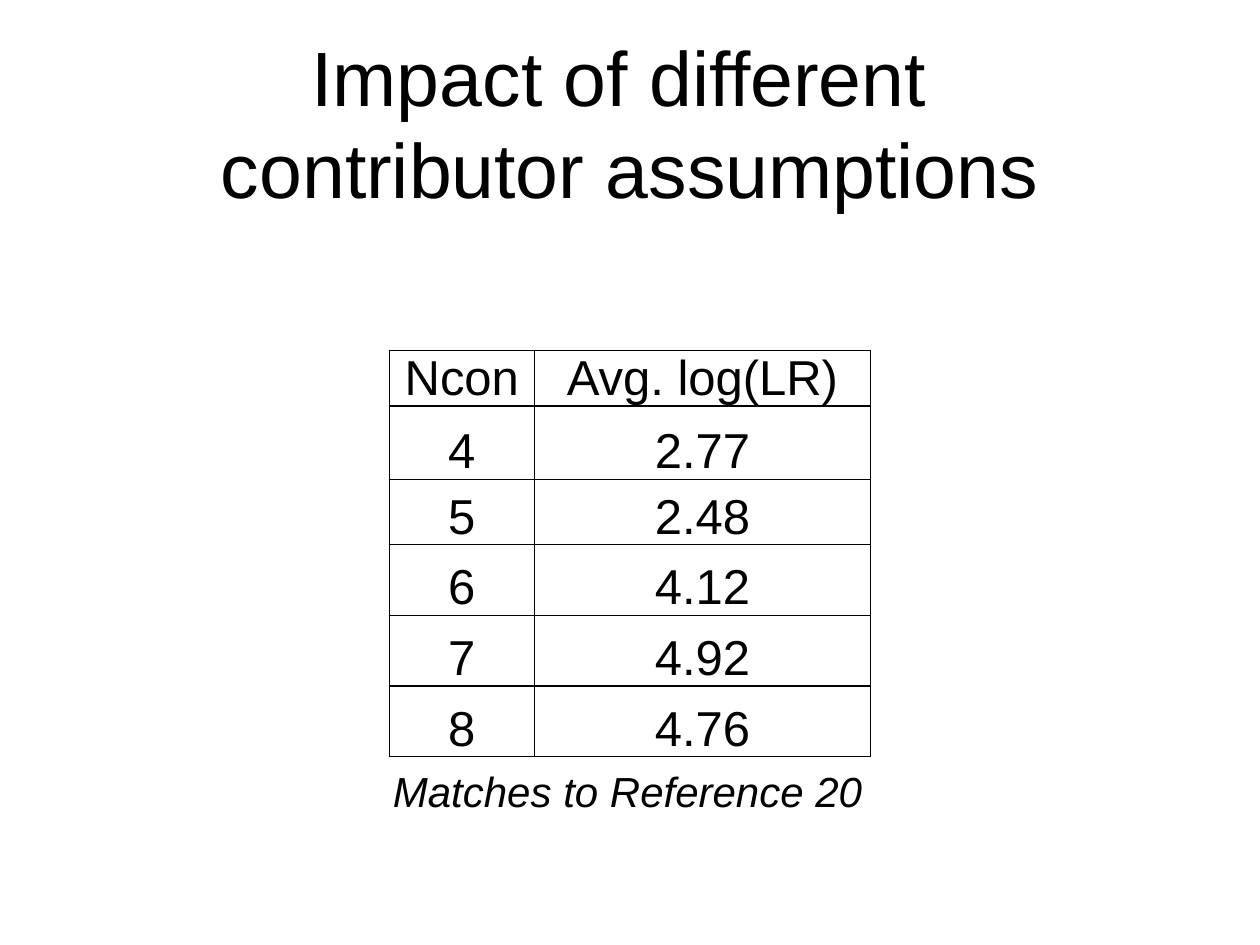
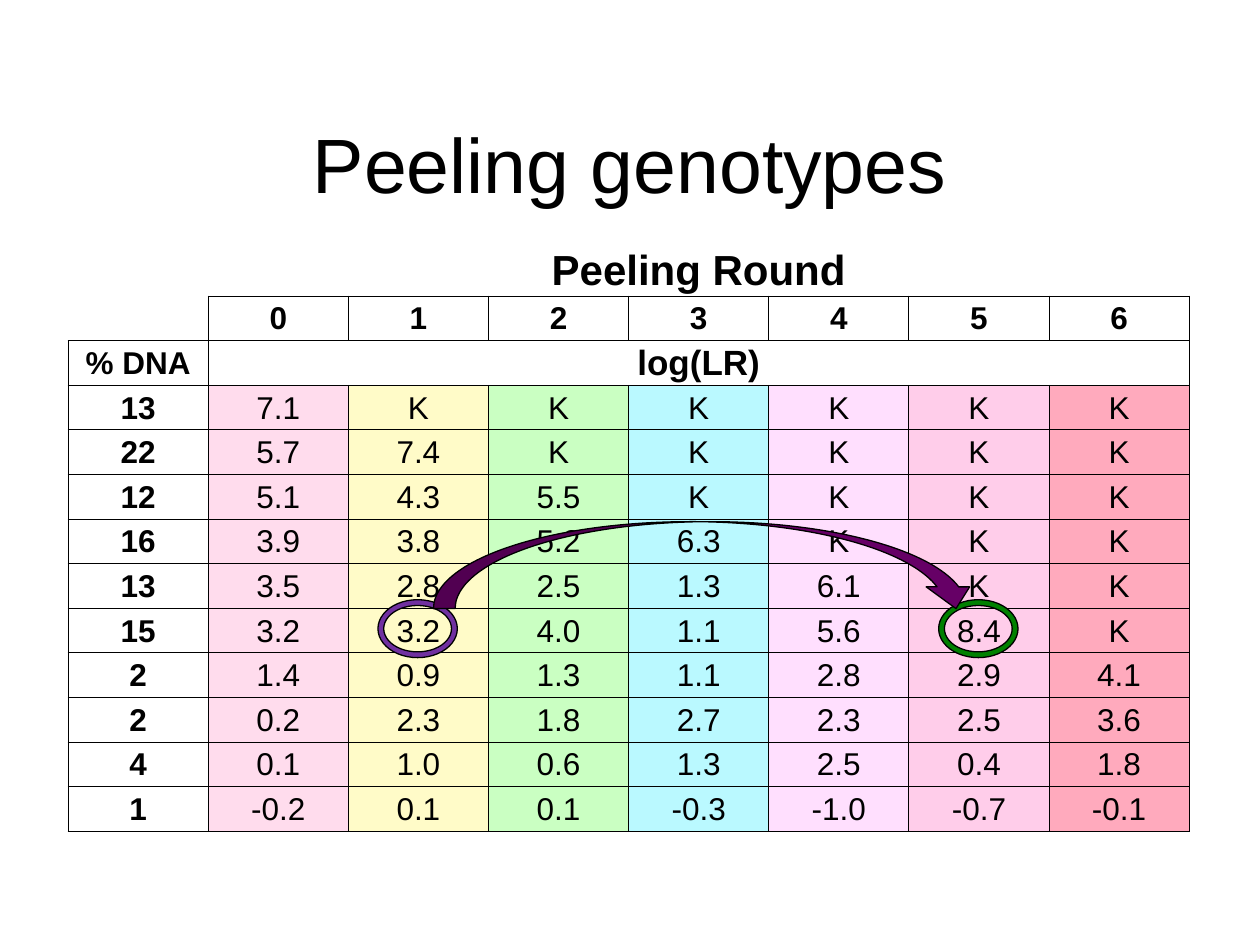
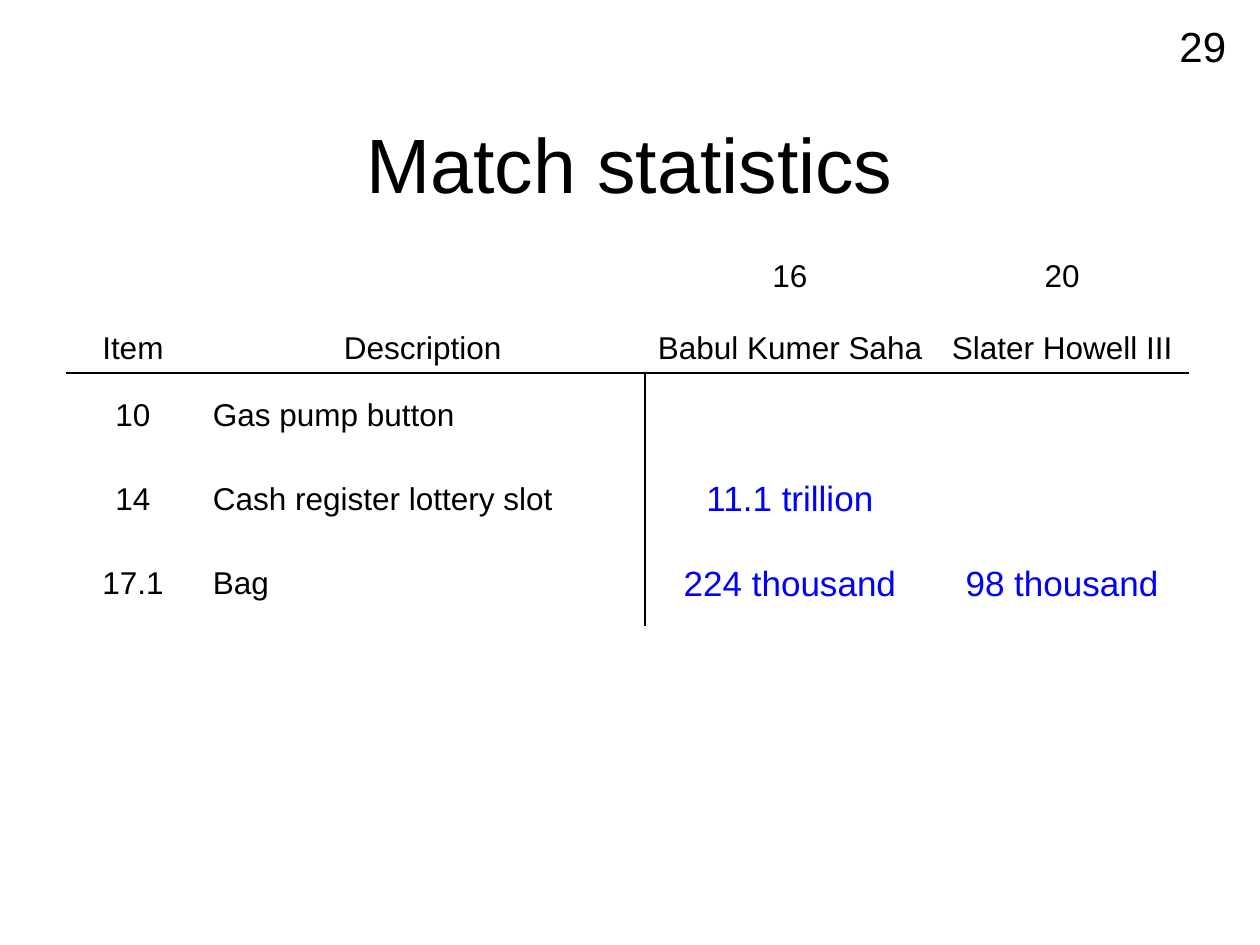
from lxml.etree import SubElement
from pptx import Presentation
from pptx.dml.color import RGBColor
from pptx.enum.shapes import MSO_SHAPE
from pptx.enum.text import MSO_ANCHOR, MSO_AUTO_SIZE, PP_ALIGN
from pptx.oxml.ns import qn
from pptx.util import Inches, Pt

FONT = "Arial"
PLAIN = "{2D5ABB26-0587-4C30-8999-92F81FD0307C}"
HUES = {"ink": "000000", "stat": "0000FF", "start": "7030A0",
        "end": "008000", "arc": "660066"}
ROUNDS = ["FFDCED", "FFFBC8", "CAFFC2", "BAF9FF", "FFDFFE", "FFCDEA", "FFAABD"]
TIGHT = (0.01, 0.01, 0.01, 0)
LOOSE = (0.1, 0.05, 0.1, 0.05)

IMPACT = [
    ["Ncon", "Avg. log(LR)"],
    ["4", "2.77"],
    ["5", "2.48"],
    ["6", "4.12"],
    ["7", "4.92"],
    ["8", "4.76"],
]
PEEL = [
    ["", "Peeling Round"] + [""] * 6,
    ["", "0", "1", "2", "3", "4", "5", "6"],
    ["% DNA", "log(LR)"] + [""] * 6,
    ["13", "7.1", "K", "K", "K", "K", "K", "K"],
    ["22", "5.7", "7.4", "K", "K", "K", "K", "K"],
    ["12", "5.1", "4.3", "5.5", "K", "K", "K", "K"],
    ["16", "3.9", "3.8", "5.2", "6.3", "K", "K", "K"],
    ["13", "3.5", "2.8", "2.5", "1.3", "6.1", "K", "K"],
    ["15", "3.2", "3.2", "4.0", "1.1", "5.6", "8.4", "K"],
    ["2", "1.4", "0.9", "1.3", "1.1", "2.8", "2.9", "4.1"],
    ["2", "0.2", "2.3", "1.8", "2.7", "2.3", "2.5", "3.6"],
    ["4", "0.1", "1.0", "0.6", "1.3", "2.5", "0.4", "1.8"],
    ["1", "-0.2", "0.1", "0.1", "-0.3", "-1.0", "-0.7", "-0.1"],
]
MATCH = [
    ["Item", "Description", ["16", "Babul Kumer Saha"], ["20", "Slater Howell III"]],
    ["10", "Gas pump button", "", ""],
    ["14", "Cash register lottery slot", "11.1 trillion", ""],
    ["17.1", "Bag", "224 thousand", "98 thousand"],
]
MARKS = [
    (MSO_SHAPE.DONUT, (3, 4.76, 0.63, 0.46), [0.1], "start"),
    (MSO_SHAPE.DONUT, (7.45, 4.76, 0.63, 0.46), [0.1], "end"),
    (MSO_SHAPE.CURVED_DOWN_ARROW, (3.44, 4.14, 4.32, 0.69), [0.25, 0.5, 0.25], "arc"),
]


def paint(hue):
    return RGBColor.from_string(HUES.get(hue, hue))


def write(frame, text, size=18, hue="ink", bold=False, italic=False,
          align=PP_ALIGN.CENTER, gap=0):
    for i, line in enumerate(text if isinstance(text, list) else [text]):
        par = frame.add_paragraph() if i else frame.paragraphs[0]
        par.text = line
        par.alignment = align
        par.space_before = Pt(gap if i else 0)
        for run in par.runs:
            font = run.font
            font.name, font.size, font.bold, font.italic = FONT, Pt(size), bold, italic
            font.color.rgb = paint(hue)


def start(deck, text, box):
    slide = deck.slides.add_slide(deck.slide_layouts[5])
    title = slide.shapes.title
    title.left, title.top, title.width, title.height = map(Inches, box)
    frame = title.text_frame
    frame.auto_size = MSO_AUTO_SIZE.NONE
    frame.vertical_anchor = MSO_ANCHOR.MIDDLE
    write(frame, text, size=44)
    return slide


def note(slide, box, text, wrap=True, **look):
    frame = slide.shapes.add_textbox(*map(Inches, box)).text_frame
    frame.word_wrap = wrap
    write(frame, text, size=24, **look)


def edge(cell, sides, width):
    props = cell._tc.get_or_add_tcPr()
    for side in "LRTB":
        line = SubElement(props, qn("a:ln" + side), w=str(Pt(width)))
        if side in sides:
            fill = SubElement(line, qn("a:solidFill"))
            SubElement(fill, qn("a:srgbClr"), val=HUES["ink"])
        else:
            SubElement(line, qn("a:noFill"))


def grid(slide, spot, data, cols, rows, style, pad, width):
    box = (*spot, sum(cols), sum(rows))
    table = slide.shapes.add_table(len(rows), len(cols), *map(Inches, box)).table
    table.first_row = table.horz_banding = False
    table._tbl.tblPr.find(qn("a:tableStyleId")).text = PLAIN
    for col, size in zip(table.columns, cols):
        col.width = Inches(size)
    for row, size in zip(table.rows, rows):
        row.height = Inches(size)
    for r, line in enumerate(data):
        for c, text in enumerate(line):
            cell = table.cell(r, c)
            sides, anchor, fill, look = style(r, c)
            edge(cell, sides, width)
            if fill:
                cell.fill.solid()
                cell.fill.fore_color.rgb = paint(fill)
            else:
                cell.fill.background()
            (cell.margin_left, cell.margin_top,
             cell.margin_right, cell.margin_bottom) = map(Inches, pad)
            cell.vertical_anchor = anchor
            write(cell.text_frame, text, **look)
    return table


def impact_style(r, c):
    return "LRTB", MSO_ANCHOR.BOTTOM, None, {"size": 28}


def peel_style(r, c):
    sides = {(0, 0): "", (1, 0): "RB"}.get((r, c), "LRTB" if r else "B")
    size = {(0, 1): 24, (2, 1): 20}.get((r, c), 18)
    body = r > 2 and c > 0
    fill = ROUNDS[c - 1] if body else None
    return sides, MSO_ANCHOR.MIDDLE, fill, {"size": size, "bold": not body}


def match_style(r, c):
    if r == 0:
        return "B", MSO_ANCHOR.BOTTOM, None, {"gap": 21}
    sides = ("T" if r == 1 else "") + {1: "R", 2: "L"}.get(c, "")
    look = {"size": 20, "hue": "stat"} if c > 1 else {}
    if c == 1:
        look["align"] = PP_ALIGN.LEFT
    return sides, MSO_ANCHOR.MIDDLE, None, look


def mark(slide, kind, box, bends, hue):
    shape = slide.shapes.add_shape(kind, *map(Inches, box))
    shape.shadow.inherit = False
    for i, bend in enumerate(bends):
        shape.adjustments[i] = bend
    shape.fill.solid()
    shape.fill.fore_color.rgb = paint(hue)
    shape.line.color.rgb = paint("ink")
    shape.line.width = Pt(0.75)


def main():
    deck = Presentation()
    deck.slide_width, deck.slide_height = Inches(10), Inches(7.5)

    slide = start(deck, "Impact of different \ncontributor assumptions", (0, 0.34, 10, 1.25))
    grid(slide, (3.09, 2.78), IMPACT, [1.15, 2.67],
         [0.44, 0.58, 0.52, 0.56, 0.56, 0.56], impact_style, TIGHT, 1)
    note(slide, (3.02, 6.03, 3.96, 0.5), "Matches to Reference 20", wrap=False,
         italic=True, align=PP_ALIGN.LEFT)

    slide = start(deck, "Peeling genotypes", (0.75, 0.67, 8.5, 1.25))
    table = grid(slide, (0.54, 1.94), PEEL, [8.9 / 8] * 8,
                 [0.41] + [4.25 / 12] * 12, peel_style, TIGHT, 0.5)
    for r in (0, 2):
        table.cell(r, 1).merge(table.cell(r, 7))
    for item in MARKS:
        mark(slide, *item)

    slide = start(deck, "Match statistics", (0.05, 0.67, 9.9, 1.25))
    grid(slide, (0.52, 1.96), MATCH, [1.07, 3.53, 2.3, 2.02],
         [1] + [0.67] * 3, match_style, LOOSE, 1.5)
    note(slide, (9.06, 0.11, 0.77, 0.46), "29", align=PP_ALIGN.RIGHT)

    deck.save("out.pptx")


if __name__ == "__main__":
    main()
